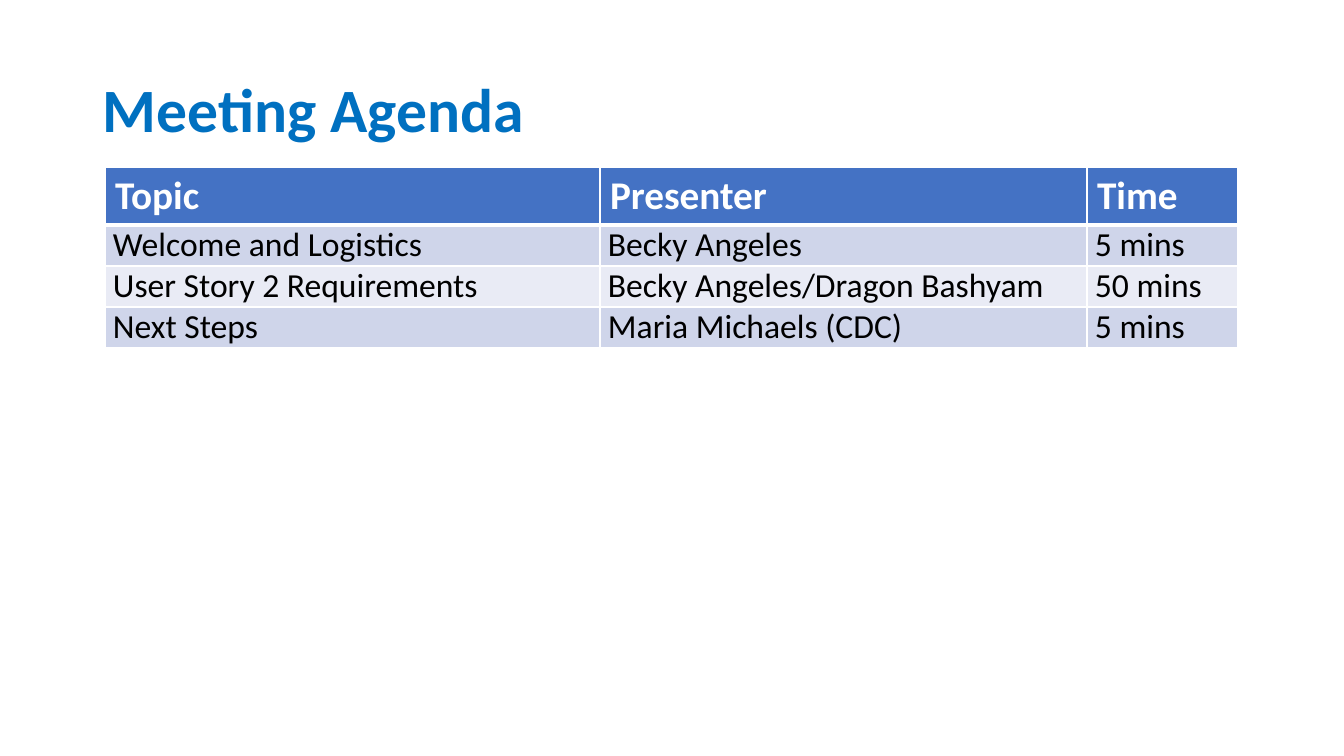
from dataclasses import dataclass

from lxml.etree import SubElement
from pptx import Presentation
from pptx.dml.color import RGBColor
from pptx.enum.text import MSO_ANCHOR as Anchor
from pptx.oxml.ns import qn
from pptx.util import Emu, Pt

EMU_PER_PX = 914400 / 100.8


@dataclass(frozen=True)
class Theme:
    font: str = "Calibri"
    title: str = "0070C0"
    header: str = "4472C4"
    bands: tuple[str, str] = ("CFD5EA", "E9EBF5")
    white: str = "FFFFFF"
    black: str = "000000"
    title_size: int = 44
    header_size: int = 28
    body_size: int = 24
    thin: int = 1
    thick: int = 3


@dataclass(frozen=True)
class AgendaItem:
    topic: str
    presenter: str
    time: str


THEME = Theme()
HEADER = AgendaItem("Topic", "Presenter", "Time")
ITEMS = [
    AgendaItem("Welcome and Logistics", "Becky Angeles", "5 mins"),
    AgendaItem("User Story 2 Requirements", "Becky Angeles/Dragon Bashyam", "50 mins"),
    AgendaItem("Next Steps", "Maria Michaels (CDC)", "5 mins"),
]
COLUMN_WIDTHS = (495, 487, 151)
HEADER_HEIGHT, ROW_HEIGHT = 58, 41


def px(n: int) -> Emu:
    return Emu(round(n * EMU_PER_PX))


def write(tf, text: str, *, size: int, color: str, bold: bool = False,
          spacing: float | None = None, after: int | None = None) -> None:
    p = tf.paragraphs[0]
    p.line_spacing = spacing
    if after is not None:
        p.space_after = Pt(after)
    r = p.add_run()
    r.text = text
    r.font.name = THEME.font
    r.font.size = Pt(size)
    r.font.bold = bold
    r.font.color.rgb = RGBColor.from_string(color)


def set_borders(cell, *, top: int, bottom: int) -> None:
    tc_pr = cell._tc.get_or_add_tcPr()
    widths = {"L": THEME.thin, "R": THEME.thin, "T": top, "B": bottom}
    for side, width in widths.items():
        ln = SubElement(tc_pr, qn(f"a:ln{side}"), w=str(Pt(width)))
        SubElement(SubElement(ln, qn("a:solidFill")), qn("a:srgbClr"), val=THEME.white)


def style_cell(cell, text: str, row: int) -> None:
    set_borders(cell, top=THEME.thick if row == 1 else THEME.thin,
                bottom=THEME.thick if row == 0 else THEME.thin)
    cell.fill.solid()
    if row == 0:
        fill = THEME.header
        write(cell.text_frame, text, size=THEME.header_size, color=THEME.white, bold=True)
    else:
        fill = THEME.bands[(row - 1) % 2]
        cell.margin_left = cell.margin_right = px(8)
        cell.margin_top = cell.margin_bottom = 0
        write(cell.text_frame, text, size=THEME.body_size, color=THEME.black, after=6)
    cell.fill.fore_color.rgb = RGBColor.from_string(fill)


def add_title(slide, text: str) -> None:
    sp = slide.shapes.add_textbox(px(93), px(40), px(1159), px(146))
    tf = sp.text_frame
    tf.word_wrap = True
    tf.vertical_anchor = Anchor.MIDDLE
    write(tf, text, size=THEME.title_size, color=THEME.title, bold=True, spacing=0.9)


def add_agenda(slide) -> None:
    entries = [HEADER, *ITEMS]
    heights = [HEADER_HEIGHT] + [ROW_HEIGHT] * len(ITEMS)
    table = slide.shapes.add_table(len(entries), len(COLUMN_WIDTHS), px(105), px(167),
                                   px(sum(COLUMN_WIDTHS)), px(sum(heights))).table
    for column, width in zip(table.columns, COLUMN_WIDTHS):
        column.width = px(width)
    for i, (entry, height) in enumerate(zip(entries, heights)):
        table.rows[i].height = px(height)
        for j, text in enumerate((entry.topic, entry.presenter, entry.time)):
            style_cell(table.cell(i, j), text, i)


def main() -> None:
    prs = Presentation()
    prs.slide_width, prs.slide_height = px(1344), px(756)
    slide = prs.slides.add_slide(prs.slide_layouts[6])
    add_title(slide, "Meeting Agenda")
    add_agenda(slide)
    prs.save("out.pptx")


if __name__ == "__main__":
    main()
